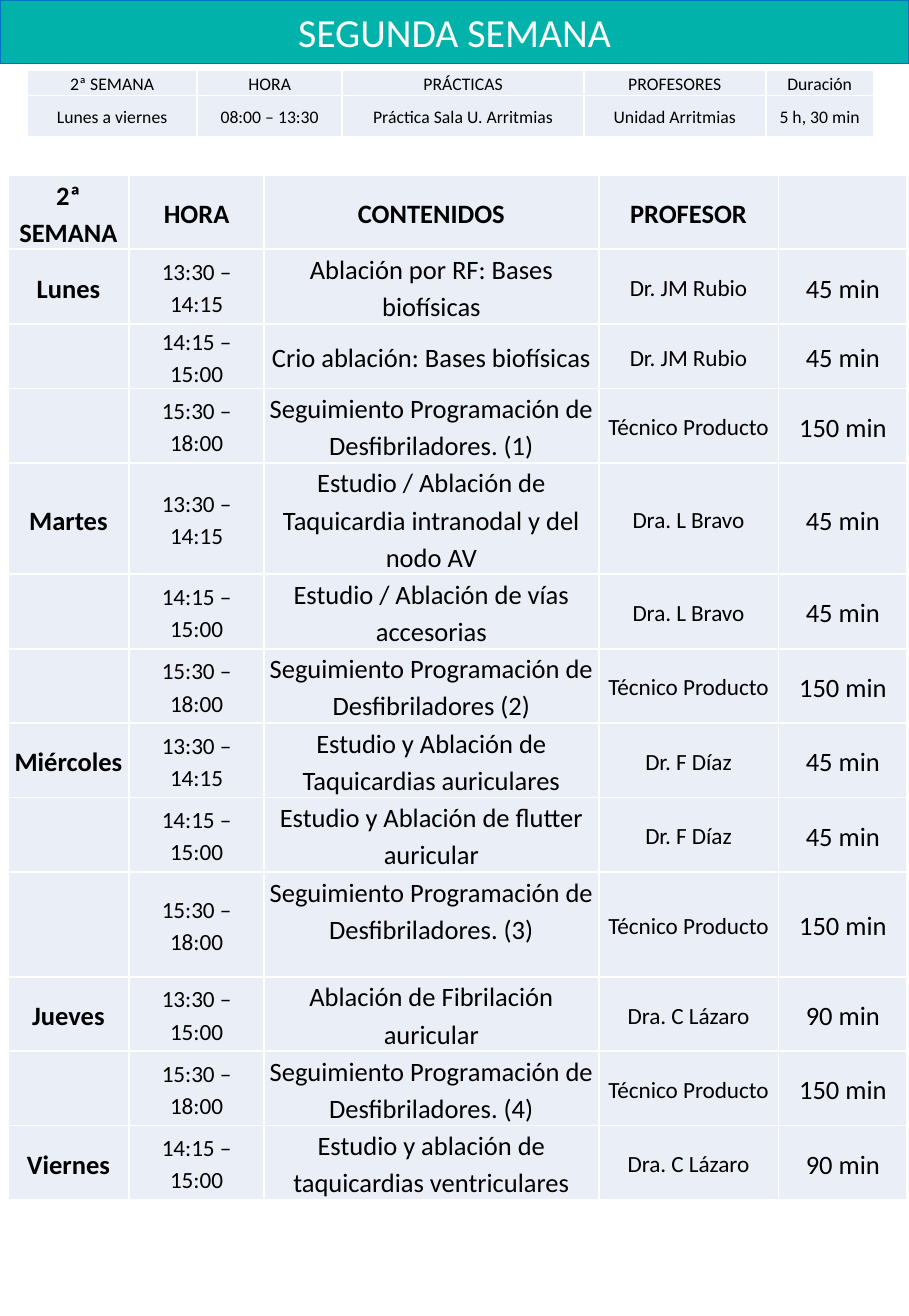
import dataclasses
import typing

import lxml.etree
import pptx
import pptx.dml.color
import pptx.enum.shapes
import pptx.enum.text
import pptx.oxml.ns
import pptx.util

Inches = pptx.util.Inches
Pt = pptx.util.Pt
RGB = pptx.dml.color.RGBColor.from_string
CENTER = pptx.enum.text.PP_ALIGN.CENTER
MIDDLE = pptx.enum.text.MSO_ANCHOR.MIDDLE

COLORS = {"teal": "00B2A9", "blue": "0070C0", "pale": "EAEFF7",
          "white": "FFFFFF", "black": "000000"}
CELL = {"margin_left": Inches(0.03), "margin_right": Inches(0.03),
        "margin_top": 0, "margin_bottom": 0, "vertical_anchor": MIDDLE}
PARA = {"alignment": CENTER, "line_spacing": 1.15}
PLAIN = {"first_row": False, "horz_banding": False}


@dataclasses.dataclass
class Grid:
    left: float
    top: float
    cols: list[float]
    rows: list[float]
    text: list[tuple[str, ...]]
    sizes: list[float]
    bold: bool = False  # bold heading row and day column


# Shared wording of the timetable
EARLY, LATE, NOON = "13:30 – 14:15", "14:15 – 15:00", "15:30 – 18:00"
TECH = "Técnico Producto"
FOLLOW = "Seguimiento Programación de "

WARD = Grid(0.17, 0.44, [1.07, 0.91, 1.52, 1.14, 0.68], [0.16, 0.26], [
    ("2ª SEMANA", "HORA", "PRÁCTICAS", "PROFESORES", "Duración"),
    ("Lunes a viernes", "08:00 – 13:30", "Práctica Sala U. Arritmias",
     "Unidad Arritmias", "5 h, 30 min"),
], [8] * 5)

TALKS = Grid(
    0.05, 1.1, [0.76, 0.85, 2.1, 1.13, 0.81],
    [0.46, 0.46, 0.4, 0.46, 0.69] + [0.46] * 4 + [0.66] + [0.46] * 3, [
        ("2ª SEMANA", "HORA", "CONTENIDOS", "PROFESOR", ""),
        ("Lunes", EARLY, "Ablación por RF: Bases biofísicas",
         "Dr. JM Rubio", "45 min"),
        ("", LATE, "Crio ablación: Bases biofísicas",
         "Dr. JM Rubio", "45 min"),
        ("", NOON, FOLLOW + "Desfibriladores. (1)", TECH, "150 min"),
        ("Martes", EARLY,
         "Estudio / Ablación de Taquicardia intranodal y del nodo AV",
         "Dra. L Bravo", "45 min"),
        ("", LATE, "Estudio / Ablación de vías accesorias",
         "Dra. L Bravo", "45 min"),
        ("", NOON, FOLLOW + "Desfibriladores (2)", TECH, "150 min"),
        ("Miércoles", EARLY, "Estudio y Ablación de Taquicardias auriculares",
         "Dr. F Díaz", "45 min"),
        ("", LATE, "Estudio y Ablación de flutter auricular",
         "Dr. F Díaz", "45 min"),
        ("", NOON, FOLLOW + "Desfibriladores. (3)", TECH, "150 min"),
        ("Jueves", "13:30 – 15:00", "Ablación de Fibrilación auricular",
         "Dra. C Lázaro", "90 min"),
        ("", NOON, FOLLOW + "Desfibriladores. (4)", TECH, "150 min"),
        ("Viernes", LATE, "Estudio y ablación de taquicardias ventriculares",
         "Dra. C Lázaro", "90 min"),
    ], [12, 10.5, 12, 10.5, 12], True)


def apply(item: typing.Any, form: dict[str, typing.Any]) -> None:
    for key, value in form.items():
        setattr(item, key, value)


def write(para: typing.Any, text: str, size: float, color: str,
          bold: bool = False) -> None:
    run = para.add_run()
    run.text = text
    apply(run.font, {"name": "Calibri", "size": Pt(size), "bold": bold})
    run.font.color.rgb = RGB(COLORS[color])


def edge(cell: typing.Any) -> None:
    qn = pptx.oxml.ns.qn
    props = cell._tc.get_or_add_tcPr()
    for tag in ("a:lnL", "a:lnR", "a:lnT", "a:lnB"):
        line = lxml.etree.SubElement(props, qn(tag), w=str(Pt(1)))
        fill = lxml.etree.SubElement(line, qn("a:solidFill"))
        lxml.etree.SubElement(fill, qn("a:srgbClr"), val=COLORS["white"])


def draw_grid(slide: typing.Any, grid: Grid) -> typing.Any:
    table = slide.shapes.add_table(
        len(grid.rows), len(grid.cols), Inches(grid.left), Inches(grid.top),
        Inches(sum(grid.cols)), Inches(sum(grid.rows))).table
    apply(table, PLAIN)
    for col, width in zip(table.columns, grid.cols):
        col.width = Inches(width)
    for row, high in zip(table.rows, grid.rows):
        row.height = Inches(high)
    for r, words in enumerate(grid.text):
        for c, text in enumerate(words):
            cell = table.cell(r, c)
            apply(cell, CELL)
            edge(cell)
            cell.fill.solid()
            cell.fill.fore_color.rgb = RGB(COLORS["pale"])
            if text:
                para = cell.text_frame.paragraphs[0]
                apply(para, PARA)
                size = grid.sizes[c] if r else grid.sizes[0]
                write(para, text, size, "black", grid.bold and 0 in (r, c))
    return table


def draw_title(slide: typing.Any, width: int) -> None:
    bar = slide.shapes.add_shape(pptx.enum.shapes.MSO_SHAPE.RECTANGLE,
                                 0, 0, width, Inches(0.4))
    bar.shadow.inherit = False
    bar.fill.solid()
    bar.fill.fore_color.rgb = RGB(COLORS["teal"])
    bar.line.color.rgb = RGB(COLORS["blue"])
    bar.line.width = Pt(0.75)
    apply(bar.text_frame, {"word_wrap": True, "vertical_anchor": MIDDLE})
    para = bar.text_frame.paragraphs[0]
    para.alignment = CENTER
    write(para, "SEGUNDA SEMANA", 18, "white")


def main() -> None:
    deck = pptx.Presentation()
    apply(deck, {"slide_width": Inches(5.71), "slide_height": Inches(8.27)})
    slide = deck.slides.add_slide(deck.slide_layouts[6])
    # Ward practice
    draw_grid(slide, WARD)
    # Title bar
    draw_title(slide, deck.slide_width)
    # Timetable, with the third follow-up talk raised in its tall row
    talks = draw_grid(slide, TALKS)
    talks.cell(9, 2).margin_bottom = Inches(0.19)
    deck.save("out.pptx")


if __name__ == "__main__":
    main()
